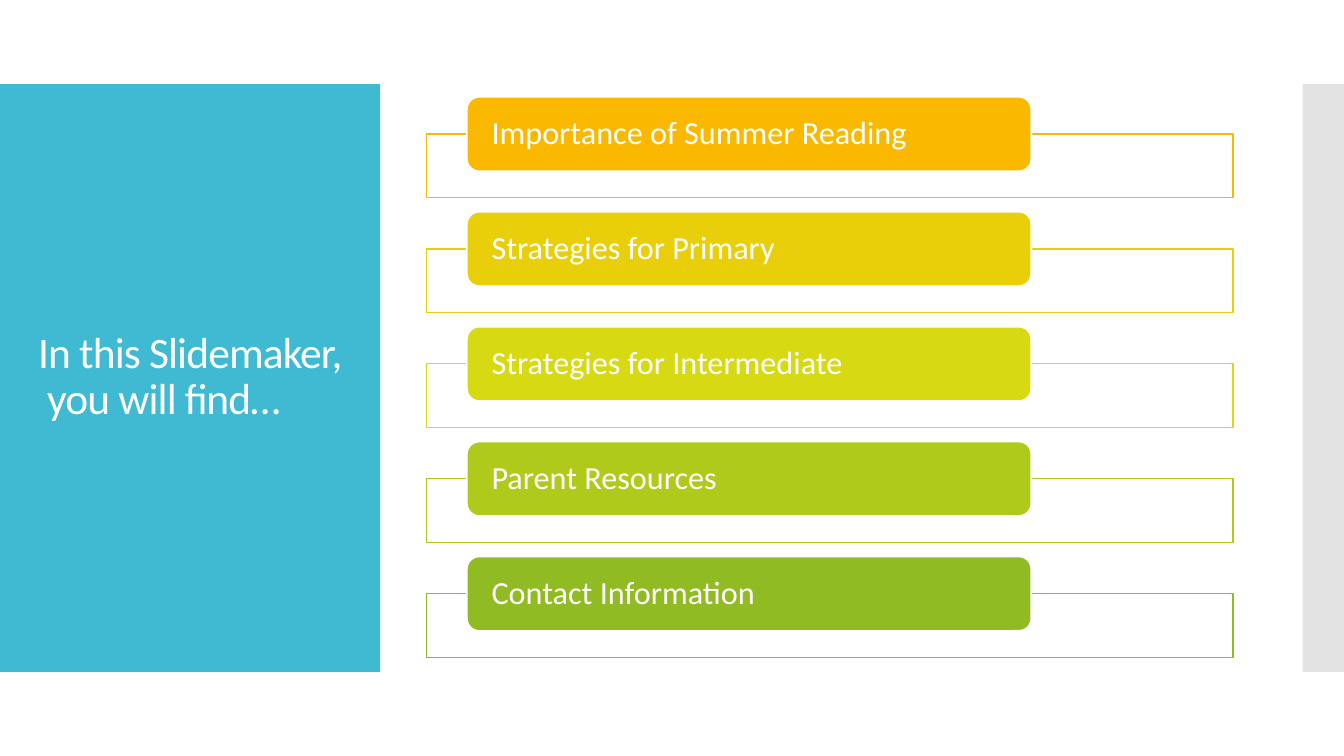
from lxml import etree
from pptx import Presentation
from pptx.dml.color import RGBColor
from pptx.enum.shapes import MSO_SHAPE
from pptx.enum.text import MSO_ANCHOR, PP_ALIGN
from pptx.oxml.ns import qn
from pptx.util import Inches, Pt

RECT = MSO_SHAPE.RECTANGLE
ROUNDED = MSO_SHAPE.ROUNDED_RECTANGLE
MIDDLE = MSO_ANCHOR.MIDDLE
LEFT = PP_ALIGN.LEFT

WIDTH, HEIGHT = 13.33, 7.5
BAND_TOP = HEIGHT / 9
BAND_HEIGHT = HEIGHT - 2 * BAND_TOP
ROW_TOP, ROW_PITCH = 0.96, 1.14
TOPICS = [
    ("Importance of Summer Reading", "FAB900"),
    ("Strategies for Primary", "E9CE0A"),
    ("Strategies for Intermediate", "D7D913"),
    ("Parent Resources", "B0CA1B"),
    ("Contact Information", "90BB23"),
]

deck = Presentation()
deck.slide_width, deck.slide_height = Inches(WIDTH), Inches(HEIGHT)
slide = deck.slides.add_slide(deck.slide_layouts[6])


def add_block(kind, left, top, width, height, fill, opacity=100, line=None, weight=0):
    block = slide.shapes.add_shape(kind, Inches(left), Inches(top), Inches(width), Inches(height))
    block.shadow.inherit = False
    block.fill.solid()
    block.fill.fore_color.rgb = RGBColor.from_string(fill)
    if opacity < 100:
        color = block.fill._xPr.find(".//" + qn("a:srgbClr"))
        etree.SubElement(color, qn("a:alpha"), val=str(opacity * 1000))
    if line:
        block.line.color.rgb = RGBColor.from_string(line)
        block.line.width = Pt(weight)
    else:
        block.line.fill.background()
    return block


def write_text(holder, text, size, inset):
    frame = holder.text_frame
    frame.word_wrap = True
    frame.vertical_anchor = MIDDLE
    frame.margin_left = frame.margin_right = Inches(inset)
    frame.margin_top = frame.margin_bottom = 0
    paragraph = frame.paragraphs[0]
    paragraph.alignment = LEFT
    paragraph.line_spacing = 0.9
    run = paragraph.add_run()
    run.text = text
    run.font.name = "Calibri"
    run.font.size = Pt(size)
    run.font.color.rgb = RGBColor.from_string("FFFFFF")
    return run


add_block(RECT, 0, BAND_TOP, 3.77, BAND_HEIGHT, "40BAD2")
heading = slide.shapes.add_textbox(Inches(0.28), Inches(1.23), Inches(3.22), Inches(5.03))
heading_run = write_text(heading, "In this Slidemaker,  you will find…", 31, 0.1)
heading_run.font._element.set("spc", "-60")

add_block(RECT, 12.92, BAND_TOP, WIDTH - 12.92, BAND_HEIGHT, "C8C8C8", 50)

for row, (topic, color) in enumerate(TOPICS):
    top = ROW_TOP + row * ROW_PITCH
    add_block(RECT, 4.23, top + 0.37, 8, 0.63, "FFFFFF", 90, color, 0.85)
    label = add_block(ROUNDED, 4.63, top, 5.6, 0.74, color, line="FFFFFF", weight=1.35)
    write_text(label, topic, 23, 0.21)

deck.save("out.pptx")
